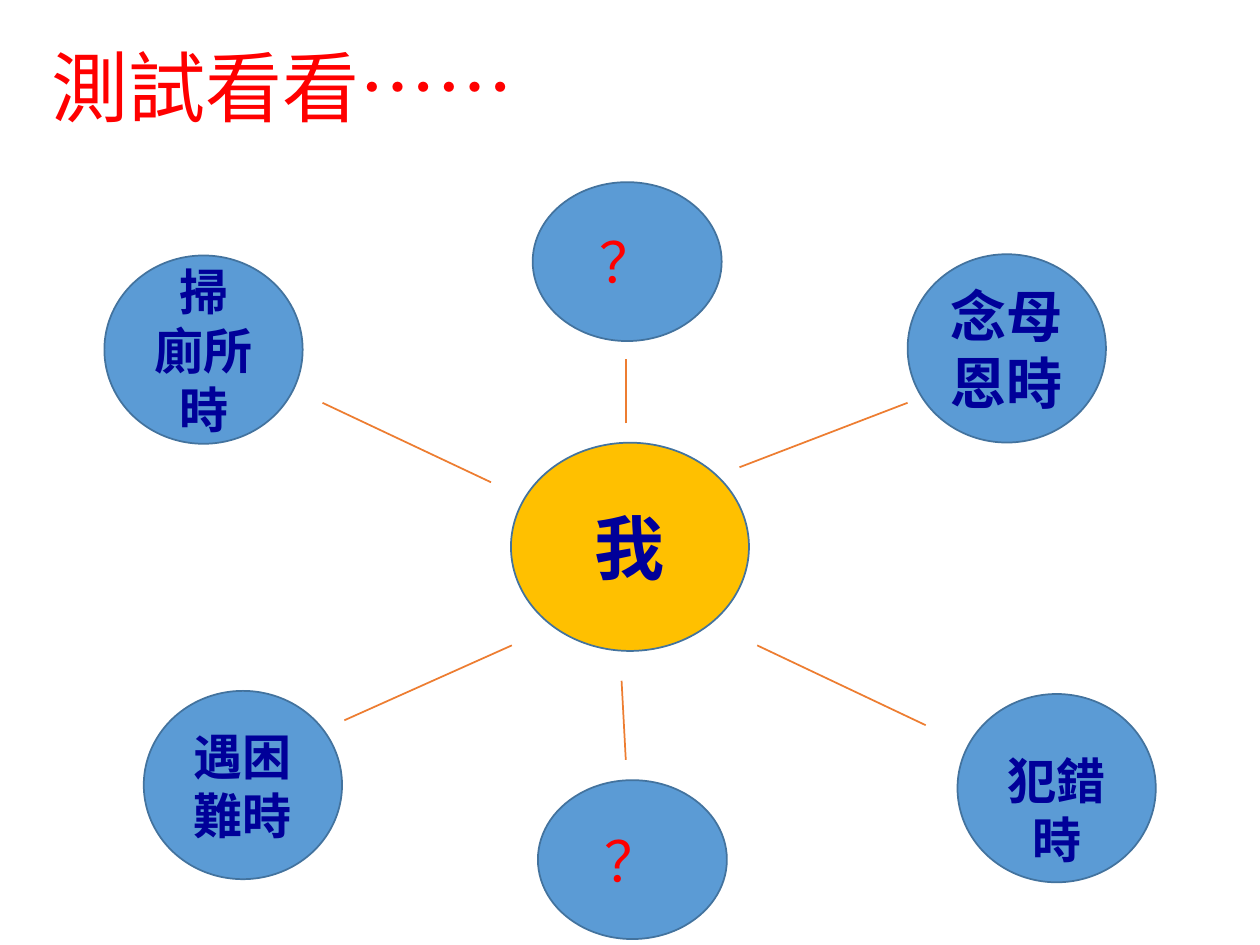
from lxml import etree
from pptx import Presentation
from pptx.dml.color import RGBColor
from pptx.enum import shapes, text
from pptx.oxml.ns import qn
from pptx.util import Pt

RED = RGBColor(0xFF, 0x00, 0x00)
NAVY = RGBColor(0x00, 0x00, 0x99)
GOLD = RGBColor(0xFF, 0xC0, 0x00)
BLUE = RGBColor(0x5B, 0x9B, 0xD5)
OUTLINE = RGBColor(0x43, 0x73, 0x9E)
ORANGE = RGBColor(0xED, 0x7D, 0x31)

TITLE = "測試看看……"
HUB_SIZE, TOPIC_SIZE, QUESTION_SIZE = (136, 119), (113.3, 107.6), (108, 90.8)
CJK = "Noto Sans CJK SC"

# text, center, size, fill, font name, font size, color, bold, top inset
BUBBLES = [
    ("我", (360, 312.5), HUB_SIZE, GOLD, "Arial", 40, NAVY, True, 3.6),
    ("掃\n廁所時", (116.3, 199.8), TOPIC_SIZE, BLUE, "Arial", 28, NAVY, True, 3.6),
    ("念母恩時", (575.3, 199.1), TOPIC_SIZE, BLUE, CJK, 32, NAVY, True, 3.6),
    ("遇困難時", (138.8, 448.6), TOPIC_SIZE, BLUE, "Arial", 28, NAVY, True, 3.6),
    ("犯錯時", (603.8, 450.4), TOPIC_SIZE, BLUE, "Arial", 28, NAVY, True, 28),
    ("？", (358.4, 149.5), QUESTION_SIZE, BLUE, "Arial", 32, RED, False, 3.6),
    ("？", (361.4, 491.2), QUESTION_SIZE, BLUE, "Arial", 32, RED, False, 3.6),
]

SPOKES = [
    ((280.6, 275.6), (184.3, 230.2)),
    ((357.6, 434.2), (355.2, 389)),
    ((357.6, 242), (357.6, 205.2)),
    ((518.6, 230.2), (422.6, 267)),
    ((529, 414.4), (432.7, 368.8)),
    ((292.5, 368.8), (196.8, 411.6)),
]


def add_title(page):
    box = page.shapes.title
    box.left, box.top, box.width, box.height = Pt(22.3), Pt(0), Pt(620.6), Pt(104.4)
    frame = box.text_frame
    frame.text = TITLE
    frame.vertical_anchor = text.MSO_ANCHOR.MIDDLE
    para = frame.paragraphs[0]
    para.alignment = text.PP_ALIGN.LEFT
    para.line_spacing = 0.9
    style_font(para.runs[0].font, "Arial", 44, RED, False)


def style_font(font, name, size, color, bold):
    font.name = name
    font.size = Pt(size)
    font.bold = bold
    font.color.rgb = color


def add_bubble(page, words, center, size, fill, name, points, color, bold, top_inset):
    (x, y), (width, height) = center, size
    bubble = page.shapes.add_shape(
        shapes.MSO_SHAPE.OVAL,
        Pt(x - width / 2), Pt(y - height / 2), Pt(width), Pt(height),
    )
    bubble.shadow.inherit = False
    bubble.fill.solid()
    bubble.fill.fore_color.rgb = fill
    bubble.line.color.rgb = OUTLINE
    bubble.line.width = Pt(1)
    frame = bubble.text_frame
    frame.text = words
    frame.word_wrap = True
    frame.vertical_anchor = text.MSO_ANCHOR.MIDDLE
    frame.margin_top = Pt(top_inset)
    for para in frame.paragraphs:
        para.alignment = text.PP_ALIGN.CENTER
        for span in para.runs:
            style_font(span.font, name, points, color, bold)


def add_spoke(page, start, end):
    spoke = page.shapes.add_connector(
        shapes.MSO_CONNECTOR.STRAIGHT, *(Pt(value) for value in start + end)
    )
    spoke.line.color.rgb = ORANGE
    spoke.line.width = Pt(1)
    etree.SubElement(spoke._element.spPr, qn("a:effectLst"))


def main():
    deck = Presentation()
    deck.slide_width, deck.slide_height = Pt(720), Pt(540)
    page = deck.slides.add_slide(deck.slide_layouts[5])
    add_title(page)
    for bubble in BUBBLES:
        add_bubble(page, *bubble)
    for spoke in SPOKES:
        add_spoke(page, *spoke)
    deck.save("out.pptx")


if __name__ == "__main__":
    main()
